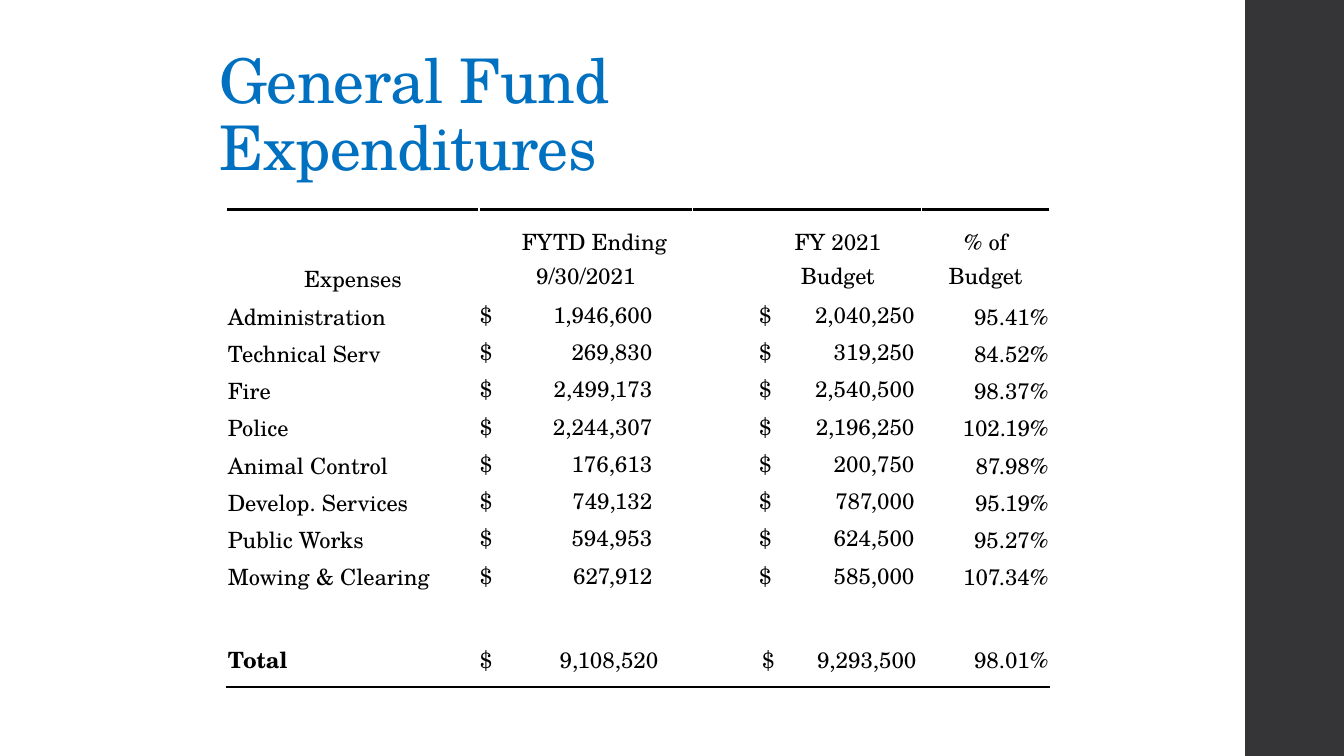
from dataclasses import dataclass

from lxml.etree import SubElement
from pptx import Presentation
from pptx.dml.color import RGBColor
from pptx.enum.shapes import MSO_SHAPE
from pptx.enum.text import MSO_ANCHOR, PP_ALIGN
from pptx.oxml import parse_xml
from pptx.oxml.ns import nsdecls, qn
from pptx.util import Inches, Pt

FONT = "TeX Gyre Schola"
BLACK, WHITE, BLUE, CHARCOAL = "000000", "FFFFFF", "0070C0", "353537"
COLUMN_WIDTHS = [2.5, 2.12, 2.27, 1.27]
ROW_HEIGHTS = [0.48] + [0.37] * 10 + [0.56]


@dataclass
class Expense:
    name: str
    spent: str
    budget: str
    percent: str


@dataclass
class AmountLayout:
    indent: float
    tab: float


EXPENSES = [
    Expense("Administration", "1,946,600", "2,040,250", "95.41%"),
    Expense("Technical Serv", "269,830", "319,250", "84.52%"),
    Expense("Fire", "2,499,173", "2,540,500", "98.37%"),
    Expense("Police", "2,244,307", "2,196,250", "102.19%"),
    Expense("Animal Control", "176,613", "200,750", "87.98%"),
    Expense("Develop. Services", "749,132", "787,000", "95.19%"),
    Expense("Public Works", "594,953", "624,500", "95.27%"),
    Expense("Mowing & Clearing", "627,912", "585,000", "107.34%"),
]
TOTAL = Expense("Total", "9,108,520", "9,293,500", "98.01%")
HEADERS = [
    ["", "FYTD Ending", "FY 2021", "% of"],
    ["Expenses", "9/30/2021", "Budget", "Budget"],
]
HEADER_INDENTS = [[0.01, 0.18, 0.62, 0.01], [0.01, 0.01, 0.62, 0.01]]

ROW_AMOUNTS = [AmountLayout(0.01, 1.71), AmountLayout(0.66, 1.54)]
TOTAL_AMOUNTS = [AmountLayout(0.01, 1.77), AmountLayout(0.69, 1.53)]


def color(value: str) -> RGBColor:
    return RGBColor.from_string(value)


def write(para, text: str, *, size: float = 16, fill: str = BLACK,
          bold: bool = False, align=PP_ALIGN.LEFT, spacing: int = 0) -> None:
    para.alignment = align
    span = para.add_run()
    span.text = text
    span.font.name = FONT
    span.font.size = Pt(size)
    span.font.bold = bold
    span.font.color.rgb = color(fill)
    if spacing:
        span.font._element.set("spc", str(spacing))


def fill_cell(cell, text: str, *, anchor=MSO_ANCHOR.BOTTOM,
              indent: float = 0.01, **text_format) -> None:
    cell.vertical_anchor = anchor
    cell.margin_left = Inches(indent)
    write(cell.text_frame.paragraphs[0], text, **text_format)


def fill_amount(cell, amount: str, layout: AmountLayout) -> None:
    fill_cell(cell, f"$\t{amount}", anchor=MSO_ANCHOR.MIDDLE, indent=layout.indent)
    properties = cell.text_frame.paragraphs[0]._p.get_or_add_pPr()
    tabs = SubElement(properties, qn("a:tabLst"))
    SubElement(tabs, qn("a:tab"), pos=str(Inches(layout.tab)), algn="r")


def fill_expense(cells, expense: Expense, layouts: list[AmountLayout],
                 *, anchor=MSO_ANCHOR.BOTTOM, bold: bool = False) -> None:
    fill_cell(cells[0], expense.name, anchor=anchor, bold=bold)
    fill_amount(cells[1], expense.spent, layouts[0])
    fill_amount(cells[2], expense.budget, layouts[1])
    fill_cell(cells[3], expense.percent, anchor=anchor, align=PP_ALIGN.RIGHT)


def add_border(cell, side: str) -> None:
    line = parse_xml(
        f'<a:{side} {nsdecls("a")} w="{Pt(2)}"><a:solidFill>'
        f'<a:srgbClr val="{BLACK}"/></a:solidFill></a:{side}>'
    )
    cell._tc.get_or_add_tcPr().insert(0, line)


def add_sidebar(page) -> None:
    bar = page.shapes.add_shape(
        MSO_SHAPE.RECTANGLE, Inches(12.35), 0, Inches(0.98), Inches(7.5))
    bar.shadow.inherit = False
    bar.fill.solid()
    bar.fill.fore_color.rgb = color(CHARCOAL)
    bar.line.fill.background()


def add_title(page) -> None:
    box = page.shapes.add_textbox(
        Inches(2.08), Inches(0.92), Inches(7.95), Inches(0.95))
    frame = box.text_frame
    frame.word_wrap = True
    frame.vertical_anchor = MSO_ANCHOR.BOTTOM
    frame.margin_right = Inches(0.5)
    para = frame.paragraphs[0]
    para.line_spacing = 0.9
    write(para, "General Fund Expenditures", size=44, fill=BLUE, spacing=-50)


def add_expense_table(page) -> None:
    table = page.shapes.add_table(
        len(ROW_HEIGHTS), len(COLUMN_WIDTHS), Inches(2.25), Inches(2.08),
        Inches(sum(COLUMN_WIDTHS)), Inches(sum(ROW_HEIGHTS))).table
    table.first_row = False
    table.horz_banding = False
    for column, width in zip(table.columns, COLUMN_WIDTHS):
        column.width = Inches(width)
    for row, height in zip(table.rows, ROW_HEIGHTS):
        row.height = Inches(height)
    for cell in table.iter_cells():
        cell.fill.solid()
        cell.fill.fore_color.rgb = color(WHITE)
        cell.margin_left = cell.margin_right = cell.margin_top = Inches(0.01)
        cell.margin_bottom = 0

    rows = [list(row.cells) for row in table.rows]

    # Headings
    for row_index, headings in enumerate(HEADERS):
        for column_index, heading in enumerate(headings):
            if not heading:
                continue
            at_bottom = row_index == 0 or column_index == 0
            fill_cell(rows[row_index][column_index], heading,
                      anchor=MSO_ANCHOR.BOTTOM if at_bottom else MSO_ANCHOR.TOP,
                      indent=HEADER_INDENTS[row_index][column_index],
                      align=PP_ALIGN.CENTER)

    # Expenses and total
    for cells, expense in zip(rows[len(HEADERS):], EXPENSES):
        fill_expense(cells, expense, ROW_AMOUNTS)
    fill_expense(rows[-1], TOTAL, TOTAL_AMOUNTS,
                 anchor=MSO_ANCHOR.MIDDLE, bold=True)

    # Rules above and below
    for cells, side in ((rows[0], "lnT"), (rows[-1], "lnB")):
        for cell in cells:
            add_border(cell, side)


def main() -> None:
    deck = Presentation()
    deck.slide_width = Inches(13.33)
    deck.slide_height = Inches(7.5)
    page = deck.slides.add_slide(deck.slide_layouts[6])
    add_sidebar(page)
    add_title(page)
    add_expense_table(page)
    deck.save("out.pptx")


if __name__ == "__main__":
    main()
